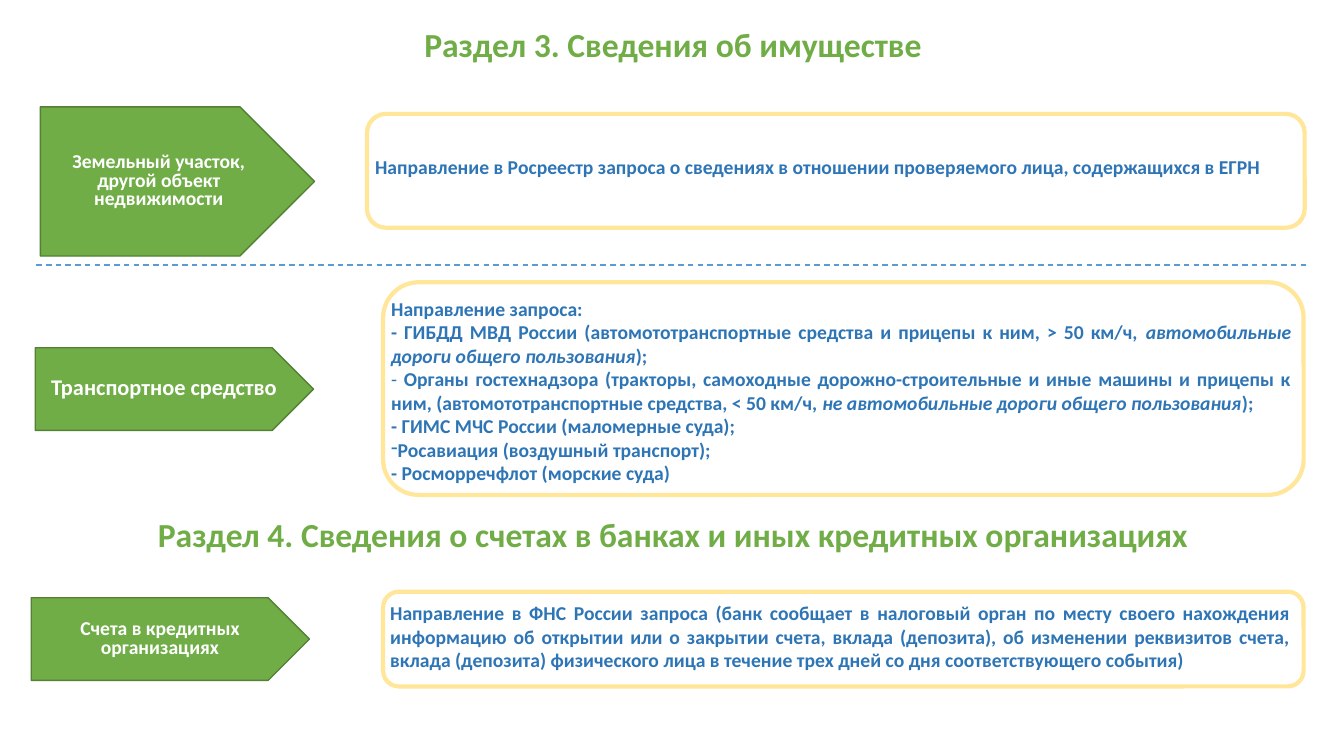
from dataclasses import dataclass

from lxml import etree
from pptx import Presentation
from pptx.dml.color import RGBColor
from pptx.enum import dml, shapes, text
from pptx.oxml.ns import qn
from pptx.util import Inches, Pt

COLORS = {
    "green": "70AD47",
    "dark_green": "538035",
    "yellow": "FFE699",
    "blue": "2E75B6",
    "divider": "5B9BD5",
    "white": "FFFFFF",
}
FONT = "Calibri"
Box = tuple[float, float, float, float]


@dataclass(frozen=True)
class Span:
    text: str
    bold: bool | None = None
    italic: bool | None = None


@dataclass(frozen=True)
class Line:
    spans: tuple[Span, ...]
    dashed: bool = False


@dataclass(frozen=True)
class Topic:
    label: str
    label_size: int
    arrow: Box
    frame: Box
    body: Box
    lines: tuple[Line, ...]


def plain(wording: str, dashed: bool = False) -> Line:
    return Line((Span(wording),), dashed)


TOPICS = (
    Topic(
        "Земельный участок, другой объект недвижимости", 14,
        (0.4, 1.06, 2.72, 1.48), (3.64, 1.13, 9.3, 1.13), (3.72, 1.47, 9.09, 0.37),
        (plain("Направление в Росреестр запроса о сведениях в отношении "
               "проверяемого лица, содержащихся в ЕГРН"),),
    ),
    Topic(
        "Транспортное средство", 16,
        (0.35, 3.45, 2.76, 0.82), (3.8, 2.8, 9.13, 2.11), (3.88, 3.15, 8.93, 1.45),
        (
            plain("Направление запроса:"),
            Line((
                Span("- ГИБДД МВД России (автомототранспортные средства и прицепы "
                     "к ним, > 50 км/ч, "),
                Span("автомобильные дороги общего пользования", italic=True),
                Span(");"),
            )),
            Line((
                Span("-", bold=False),
                Span(" Органы гостехнадзора (тракторы, самоходные дорожно-строительные "
                     "и иные машины и прицепы к ним, (автомототранспортные средства, "
                     "< 50 км/ч, "),
                Span("не автомобильные дороги общего пользования", italic=True),
                Span(");"),
            )),
            plain("- ГИМС МЧС России (маломерные суда);"),
            plain("Росавиация (воздушный транспорт);", dashed=True),
            plain("- Росморречфлот (морские суда)"),
        ),
    ),
    Topic(
        "Счета в кредитных организациях", 14,
        (0.31, 5.93, 2.76, 0.82), (3.8, 5.87, 9.13, 0.94), (3.87, 6.05, 8.93, 0.53),
        (plain("Направление в ФНС России запроса (банк сообщает в налоговый орган "
               "по месту своего нахождения информацию об открытии или о закрытии счета, "
               "вклада (депозита), об изменении реквизитов счета, вклада (депозита) "
               "физического лица в течение трех дней со дня соответствующего события)"),),
    ),
)


def rgb(name: str) -> RGBColor:
    return RGBColor.from_string(COLORS[name])


def inches(box: Box) -> list[int]:
    return [Inches(length) for length in box]


def format_paragraph(paragraph, size: int, color: str, align, spacing: float = 1.0) -> None:
    paragraph.alignment = align
    paragraph.line_spacing = spacing
    font = paragraph.font
    font.name, font.size, font.bold = FONT, Pt(size), True
    font.color.rgb = rgb(color)


def add_arrow(slide, topic: Topic) -> None:
    arrow = slide.shapes.add_shape(shapes.MSO_SHAPE.PENTAGON, *inches(topic.arrow))
    arrow.shadow.inherit = False
    arrow.fill.solid()
    arrow.fill.fore_color.rgb = rgb("green")
    arrow.line.color.rgb = rgb("dark_green")
    arrow.line.width = Pt(1)
    label = arrow.text_frame
    label.word_wrap = True
    label.vertical_anchor = text.MSO_ANCHOR.MIDDLE
    label.text = topic.label
    format_paragraph(label.paragraphs[0], topic.label_size, "white",
                     text.PP_ALIGN.CENTER, 0.8)


def add_dash_bullet(paragraph) -> None:
    properties = paragraph._p.get_or_add_pPr()
    properties.set("marL", "0")
    properties.set("indent", "0")
    etree.SubElement(properties, qn("a:buFontTx"))
    etree.SubElement(properties, qn("a:buChar")).set("char", "-")


def add_card(slide, topic: Topic) -> None:
    """Group a rounded frame with the request text inside it."""
    card = slide.shapes.add_group_shape()
    frame = card.shapes.add_shape(shapes.MSO_SHAPE.ROUNDED_RECTANGLE, *inches(topic.frame))
    frame.shadow.inherit = False
    frame.fill.background()
    frame.line.color.rgb = rgb("yellow")
    frame.line.width = Pt(3)

    body = card.shapes.add_textbox(*inches(topic.body)).text_frame
    body.word_wrap = True
    body.auto_size = text.MSO_AUTO_SIZE.SHAPE_TO_FIT_TEXT
    body.vertical_anchor = text.MSO_ANCHOR.MIDDLE
    body.margin_left = body.margin_top = body.margin_right = body.margin_bottom = 0
    for index, line in enumerate(topic.lines):
        paragraph = body.add_paragraph() if index else body.paragraphs[0]
        if line.dashed:
            add_dash_bullet(paragraph)
        format_paragraph(paragraph, 14, "blue", text.PP_ALIGN.JUSTIFY)
        for span in line.spans:
            run = paragraph.add_run()
            run.text = span.text
            run.font.bold, run.font.italic = span.bold, span.italic


def format_heading(heading, wording: str, top: float) -> None:
    heading.left, heading.top, heading.width, heading.height = inches((0.61, top, 12.13, 0.5))
    frame = heading.text_frame
    frame.word_wrap = True
    frame.auto_size = text.MSO_AUTO_SIZE.SHAPE_TO_FIT_TEXT
    frame.vertical_anchor = text.MSO_ANCHOR.TOP
    frame.text = wording
    format_paragraph(frame.paragraphs[0], 24, "green", text.PP_ALIGN.CENTER)


def add_divider(slide) -> None:
    divider = slide.shapes.add_connector(
        shapes.MSO_CONNECTOR.STRAIGHT, *inches((0.36, 2.63, 12.97, 2.63)))
    divider.line.color.rgb = rgb("divider")
    divider.line.width = Pt(1)
    divider.line.dash_style = dml.MSO_LINE.DASH
    etree.SubElement(divider._element.spPr, qn("a:effectLst"))


def main() -> None:
    presentation = Presentation()
    presentation.slide_width, presentation.slide_height = Inches(13.33), Inches(7.5)
    slide = presentation.slides.add_slide(presentation.slide_layouts.get_by_name("Title Only"))
    format_heading(slide.shapes.title, "Раздел 3. Сведения об имуществе", 0.19)
    add_divider(slide)
    for topic in TOPICS:
        add_arrow(slide, topic)
        add_card(slide, topic)
    accounts_heading = slide.shapes.add_textbox(0, 0, 0, 0)
    format_heading(accounts_heading,
                   "Раздел 4. Сведения о счетах в банках и иных кредитных организациях", 5.05)
    presentation.save("out.pptx")


if __name__ == "__main__":
    main()
